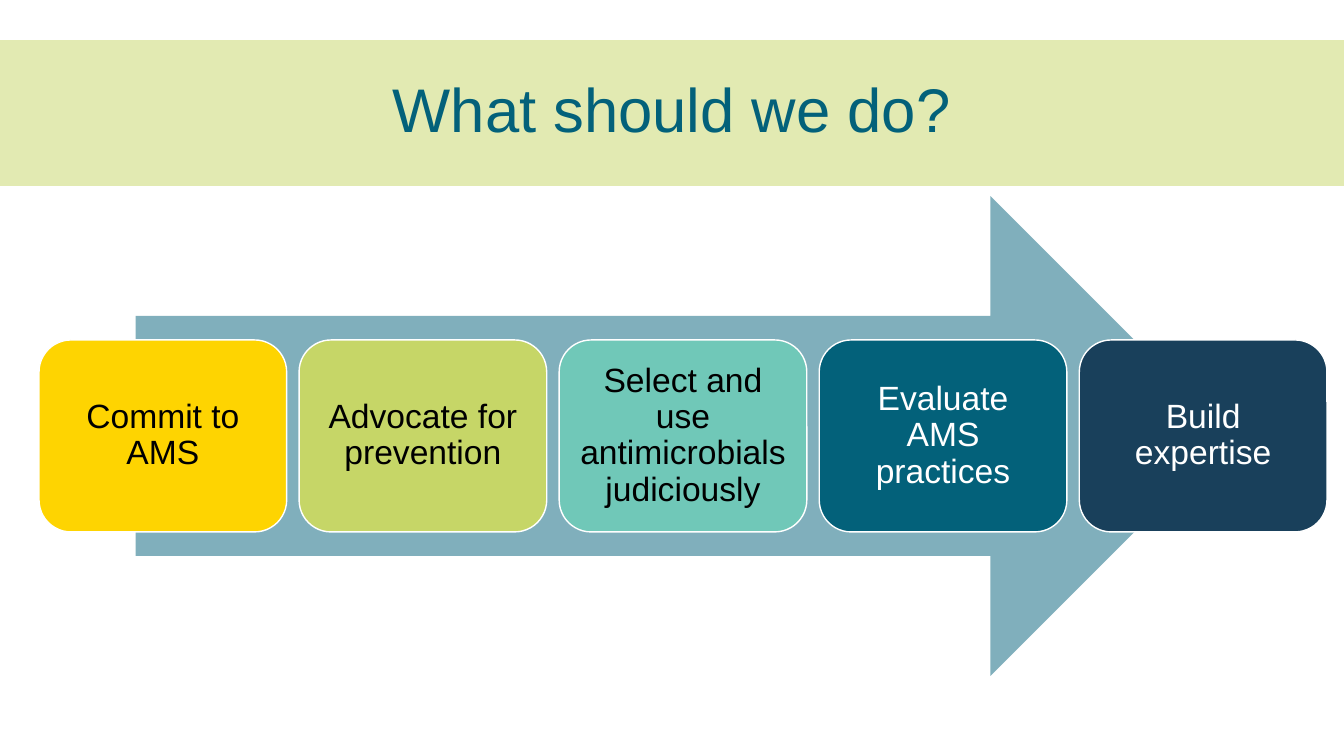
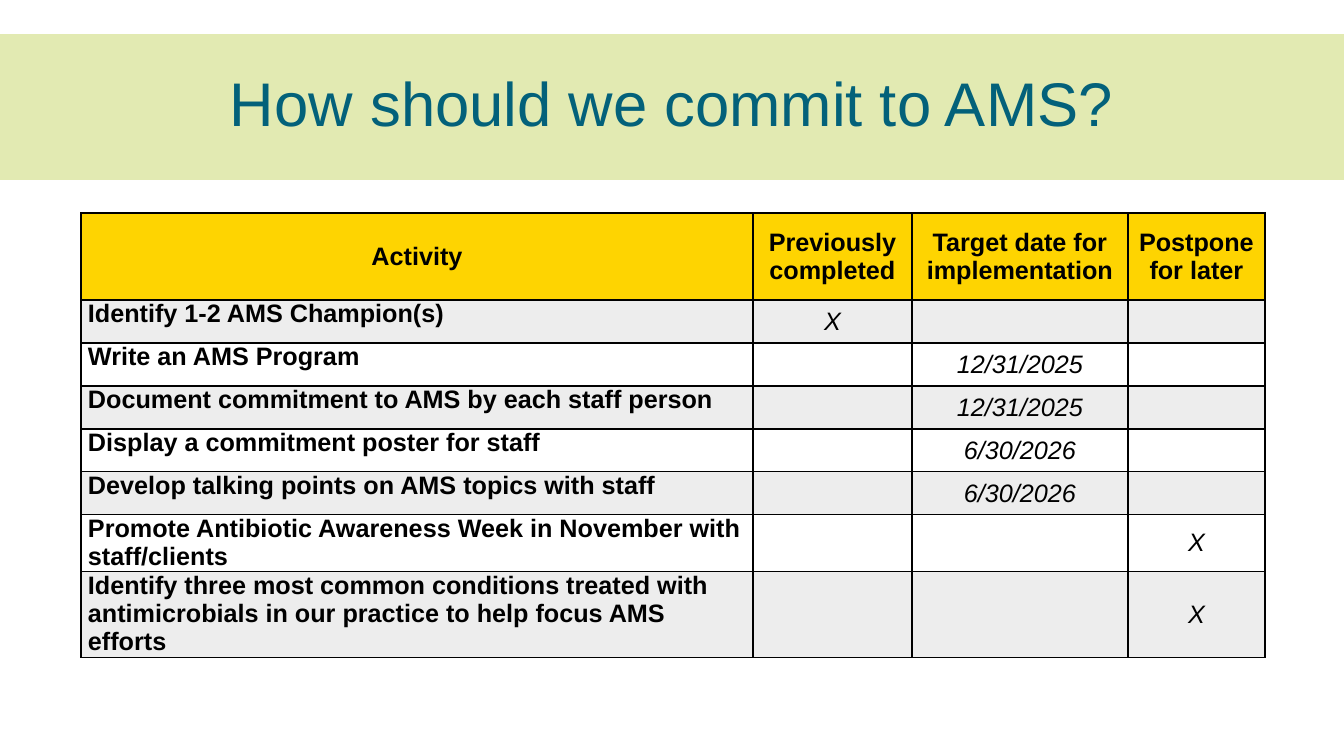
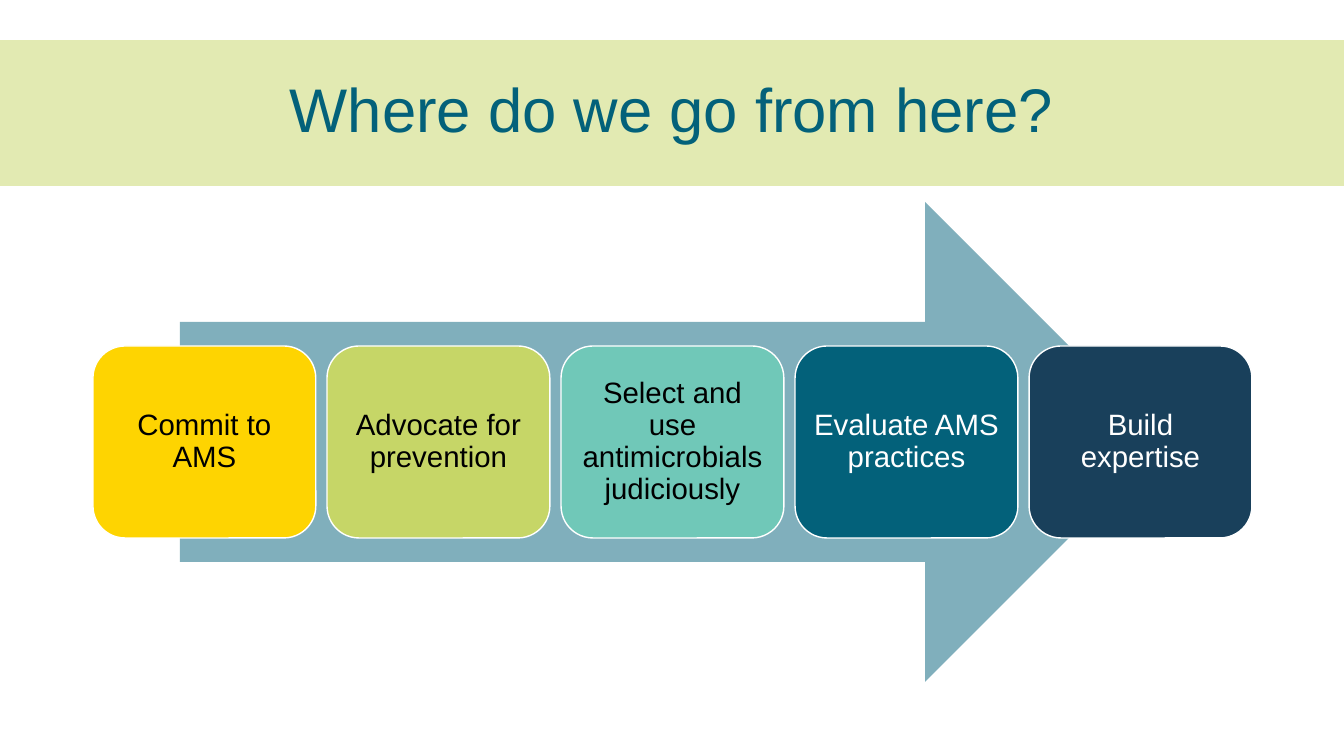
from lxml import etree
from pptx import Presentation
from pptx.dml.color import RGBColor
from pptx.enum.shapes import MSO_SHAPE
from pptx.enum.text import MSO_ANCHOR, PP_ALIGN
from pptx.oxml import parse_xml
from pptx.oxml.ns import qn
from pptx.util import Emu, Pt

RECTANGLE = MSO_SHAPE.RECTANGLE
ROUNDED = MSO_SHAPE.ROUNDED_RECTANGLE
RIGHT_ARROW = MSO_SHAPE.RIGHT_ARROW
TOP, MIDDLE = MSO_ANCHOR.TOP, MSO_ANCHOR.MIDDLE
LEFT, CENTER = PP_ALIGN.LEFT, PP_ALIGN.CENTER

EMU_PER_PX = 914400 / 100.8
DRAWING_NS = "http://schemas.openxmlformats.org/drawingml/2006/main"
FONT = "Arial"
BLACK, WHITE = "000000", "FFFFFF"
YELLOW, LIME, MINT, TEAL, NAVY, GRAY = (
    "FED401", "C6D667", "70C8B8", "03617A", "19405B", "A5A5A5")

STEPS = [
    ("Commit to AMS", YELLOW, BLACK),
    ("Advocate for prevention", LIME, BLACK),
    ("Select and use antimicrobials judiciously", MINT, BLACK),
    ("Evaluate AMS practices", TEAL, WHITE),
    ("Build expertise", NAVY, WHITE),
]

ACTIVITIES = [
    ("Activity", "Previously completed", "Target date for implementation",
     "Postpone for later"),
    ("Identify 1-2 AMS Champion(s)", "X", "", ""),
    ("Write an AMS Program", "", "12/31/2025", ""),
    ("Document commitment to AMS by each staff person", "", "12/31/2025", ""),
    ("Display a commitment poster for staff", "", "6/30/2026", ""),
    ("Develop talking points on AMS topics with staff", "", "6/30/2026", ""),
    ("Promote Antibiotic Awareness Week in November with staff/clients",
     "", "", "X"),
    ("Identify three most common conditions treated with antimicrobials "
     "in our practice to help focus AMS efforts", "", "", "X"),
]
COLUMN_WIDTHS = [672, 159, 216, 137]
ROW_HEIGHTS = [87, 43, 43, 43, 43, 43, 56, 86]


def px(length):
    return Emu(round(length * EMU_PER_PX))


def color(hex_string):
    return RGBColor.from_string(hex_string)


def paint(fill, hex_string, opacity=100):
    fill.solid()
    fill.fore_color.rgb = color(hex_string)
    if opacity < 100:
        srgb = fill._xPr.find(qn("a:solidFill")).find(qn("a:srgbClr"))
        etree.SubElement(srgb, qn("a:alpha"), val=str(opacity * 1000))


def write(frame, text, size=18, ink=BLACK, bold=False, italic=False,
          align=CENTER, spacing=1.0):
    frame.word_wrap = True
    paragraph = frame.paragraphs[0]
    paragraph.alignment = align
    paragraph.line_spacing = spacing
    run = paragraph.add_run()
    run.text = text
    run.font.name = FONT
    run.font.size = Pt(size)
    run.font.bold = bold
    run.font.italic = italic
    run.font.color.rgb = color(ink)


def outline_cell(cell):
    properties = cell._tc.get_or_add_tcPr()
    for side in ("lnL", "lnR", "lnT", "lnB"):
        properties.append(parse_xml(
            f'<a:{side} xmlns:a="{DRAWING_NS}" w="12700"><a:solidFill>'
            f'<a:srgbClr val="{BLACK}"/></a:solidFill></a:{side}>'))


class Deck:
    def __init__(self):
        self.presentation = Presentation()
        self.presentation.slide_width = px(1344)
        self.presentation.slide_height = px(756)
        self.slide = None

    def new_slide(self, title, band_top=40):
        layout = self.presentation.slide_layouts[6]
        self.slide = self.presentation.slides.add_slide(layout)
        band = self.shape(RECTANGLE, 0, band_top, 1344, 146, LIME, opacity=50)
        write(band.text_frame, title, size=44, ink=TEAL, spacing=0.9)

    def shape(self, kind, left, top, width, height, fill, opacity=100, line=None):
        shape = self.slide.shapes.add_shape(
            kind, px(left), px(top), px(width), px(height))
        shape.shadow.inherit = False
        paint(shape.fill, fill, opacity)
        if line:
            shape.line.color.rgb = color(line)
            shape.line.width = Pt(1)
        else:
            shape.line.fill.background()
        shape.text_frame.vertical_anchor = MIDDLE
        return shape

    def process(self, left, top, width, size, margin):
        height = 480
        arrow_width = width * 0.85
        self.shape(RIGHT_ARROW, left + (width - arrow_width) / 2, top,
                   arrow_width, height, TEAL, opacity=50)
        step_height = height * 0.4
        gap_ratio = 0.05
        step_width = width / (len(STEPS) + gap_ratio * (len(STEPS) - 1))
        pitch = step_width * (1 + gap_ratio)
        for index, (label, fill, ink) in enumerate(STEPS):
            step = self.shape(ROUNDED, left + index * pitch,
                              top + (height - step_height) / 2,
                              step_width, step_height, fill, line=WHITE)
            frame = step.text_frame
            frame.margin_left = frame.margin_right = px(margin)
            frame.margin_top = frame.margin_bottom = px(margin)
            write(frame, label, size=size, ink=ink, spacing=0.9)

    def activity_table(self, left, top):
        table = self.slide.shapes.add_table(
            len(ROW_HEIGHTS), len(COLUMN_WIDTHS), px(left), px(top),
            px(sum(COLUMN_WIDTHS)), px(sum(ROW_HEIGHTS))).table
        table.first_row = table.horz_banding = False
        for column, width in zip(table.columns, COLUMN_WIDTHS):
            column.width = px(width)
        for row, height in zip(table.rows, ROW_HEIGHTS):
            row.height = px(height)
        for row_index, entries in enumerate(ACTIVITIES):
            for column_index, entry in enumerate(entries):
                self.activity_cell(table.cell(row_index, column_index), entry,
                                   row_index, column_index)

    def activity_cell(self, cell, entry, row_index, column_index):
        header = row_index == 0
        activity = column_index == 0 and not header
        outline_cell(cell)
        if header:
            paint(cell.fill, YELLOW)
        elif row_index % 2:
            paint(cell.fill, GRAY, opacity=20)
        else:
            cell.fill.background()
        cell.margin_left = cell.margin_right = px(7)
        cell.margin_top = cell.margin_bottom = 0
        cell.vertical_anchor = TOP if activity else MIDDLE
        if entry:
            write(cell.text_frame, entry, bold=header or activity,
                  italic=not (header or activity),
                  align=LEFT if activity else CENTER)


def main():
    deck = Deck()
    deck.new_slide("What should we do?")
    deck.process(39, 196, 1288, size=24, margin=10)
    deck.new_slide("How should we commit to AMS?", band_top=34)
    deck.activity_table(81, 213)
    deck.new_slide("Where do we go from here?")
    deck.process(93, 202, 1159, size=21, margin=9)
    deck.presentation.save("out.pptx")


if __name__ == "__main__":
    main()
